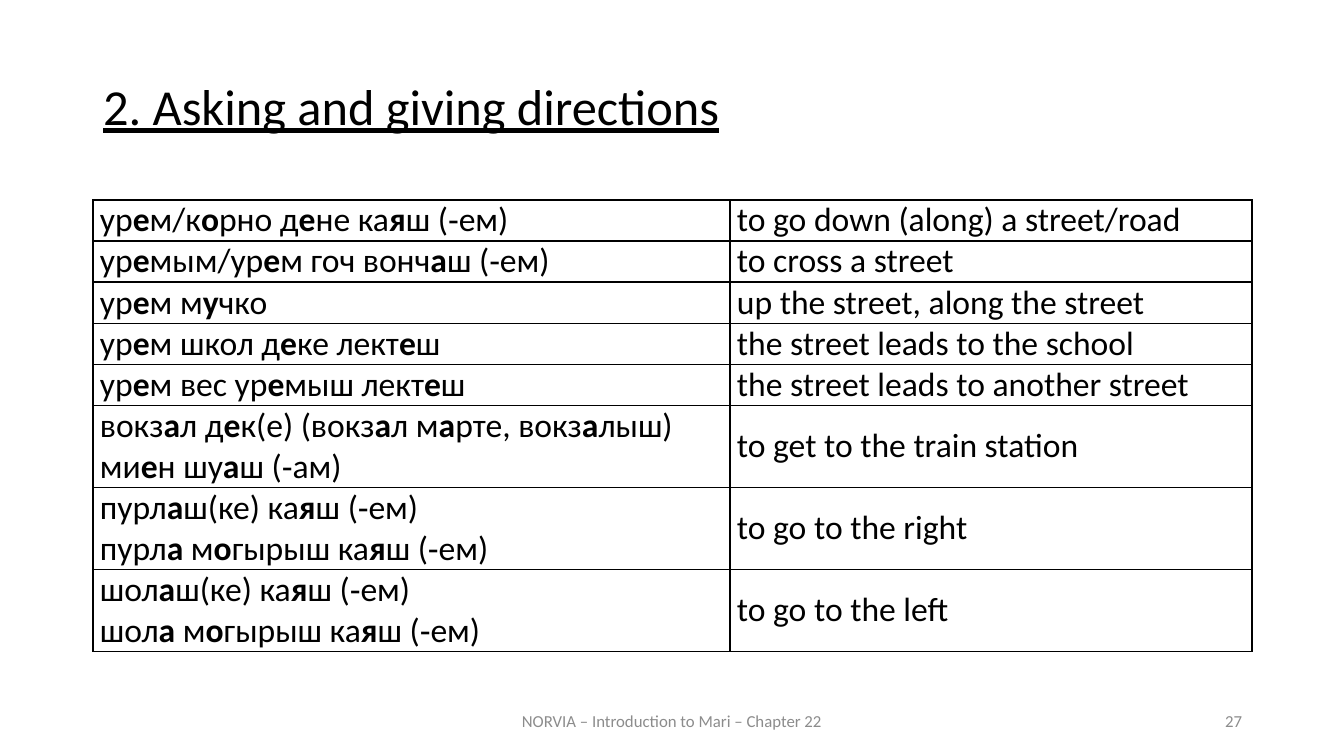
from lxml.etree import SubElement
from pptx import Presentation
from pptx.dml.color import RGBColor
from pptx.enum.text import MSO_ANCHOR as Anchor, MSO_AUTO_SIZE as AutoSize, PP_ALIGN as Align
from pptx.oxml import parse_xml
from pptx.oxml.ns import nsdecls, qn
from pptx.util import Emu, Pt

BLACK = RGBColor(0x00, 0x00, 0x00)
GREY = RGBColor(0x8C, 0x8C, 0x8C)
LEFT, WIDTH = 93, 1159
LINE_HEIGHT = 41

# Asterisks enclose the stressed (bold) vowels; a line break starts a paragraph
PHRASES = [
    ("ур*е*м/к*о*рно д*е*не ка*я*ш (‑ем)", "to go down (along) a street/road", 1),
    ("ур*е*мым/ур*е*м гоч вонч*а*ш (‑ем)", "to cross a street", 1),
    ("ур*е*м м*у*чко", "up the street, along the street", 1),
    ("ур*е*м школ д*е*ке лект*е*ш", "the street leads to the school", 1),
    ("ур*е*м вес ур*е*мыш лект*е*ш", "the street leads to another street", 1),
    ("вокз*а*л д*е*к(е) (вокз*а*л м*а*рте, вокз*а*лыш) ми*е*н шу*а*ш (‑ам)",
     "to get to the train station", 2),
    ("пурл*а*ш(ке) ка*я*ш (‑ем)\nпурл*а* м*о*гырыш ка*я*ш (‑ем)", "to go to the right", 2),
    ("шол*а*ш(ке) ка*я*ш (‑ем)\nшол*а* м*о*гырыш ка*я*ш (‑ем)", "to go to the left", 2),
]


def px(count):
    """Turn pixels into EMU at 100.8 pixels to the inch."""
    return Emu(round(count * 914400 / 100.8))


def write(frame, text, size=24, color=BLACK, align=Align.LEFT, underline=False,
          spacing=None, font="Calibri"):
    """Fill a text frame, with bold between asterisks."""
    for number, line in enumerate(text.split("\n")):
        paragraph = frame.add_paragraph() if number else frame.paragraphs[0]
        paragraph.alignment = align
        if spacing:
            paragraph.line_spacing = spacing
        for index, piece in enumerate(line.split("*")):
            if not piece:
                continue
            run = paragraph.add_run()
            run.text = piece
            run.font.name = font
            run.font.size = Pt(size)
            run.font.bold = index % 2 == 1
            run.font.underline = underline
            run.font.color.rgb = color


class SlideBuilder:
    def __init__(self, deck):
        self.slide = deck.slides.add_slide(deck.slide_layouts[5])

    def heading(self, text, left, top, width, height):
        title = self.slide.shapes.title
        title.left, title.top, title.width, title.height = map(px, (left, top, width, height))
        frame = title.text_frame
        frame.word_wrap = True
        frame.auto_size = AutoSize.NONE
        frame.vertical_anchor = Anchor.TOP
        write(frame, text, size=36, align=Align.JUSTIFY, underline=True, spacing=0.9)

    def footer(self, text, left, width, align):
        box = self.slide.shapes.add_textbox(px(left), px(701), px(width), px(40))
        frame = box.text_frame
        frame.word_wrap = True
        frame.vertical_anchor = Anchor.MIDDLE
        write(frame, text, size=12, color=GREY, align=align)

    def glossary(self, phrases, left, top, widths):
        heights = [lines * LINE_HEIGHT for _, _, lines in phrases]
        table = self.slide.shapes.add_table(
            len(phrases), len(widths), px(left), px(top), px(sum(widths)), px(sum(heights))).table
        table.first_row = table.horz_banding = False
        for column, width in zip(table.columns, widths):
            column.width = px(width)
        for row, height, (mari, english, _) in zip(table.rows, heights, phrases):
            row.height = px(height)
            for cell, text in zip(row.cells, (mari, english)):
                self.cell(cell, text)

    def cell(self, cell, text):
        cell.fill.background()
        cell.vertical_anchor = Anchor.MIDDLE
        cell.margin_left = cell.margin_right = px(7)
        cell.margin_top = cell.margin_bottom = 0
        write(cell.text_frame, text)
        # Borders come before the fill in the cell properties
        properties = cell._tc.get_or_add_tcPr()
        for index, side in enumerate(("lnL", "lnR", "lnT", "lnB")):
            border = parse_xml(f'<a:{side} {nsdecls("a")} w="{Pt(1)}"/>')
            fill = SubElement(border, qn("a:solidFill"))
            SubElement(fill, qn("a:srgbClr"), val=str(BLACK))
            properties.insert(index, border)


def main():
    deck = Presentation()
    deck.slide_width, deck.slide_height = px(1344), px(756)
    page = SlideBuilder(deck)

    # Heading
    page.heading("2. Asking and giving directions", LEFT, 77, WIDTH, 84)

    # Mari phrases and their translations
    page.glossary(PHRASES, LEFT, 200, (637, WIDTH - 637))

    # Footer and page number
    page.footer("NORVIA – Introduction to Mari – Chapter 22", 445, 454, Align.CENTER)
    page.footer("27", 950, 302, Align.RIGHT)

    deck.save("out.pptx")


if __name__ == "__main__":
    main()
